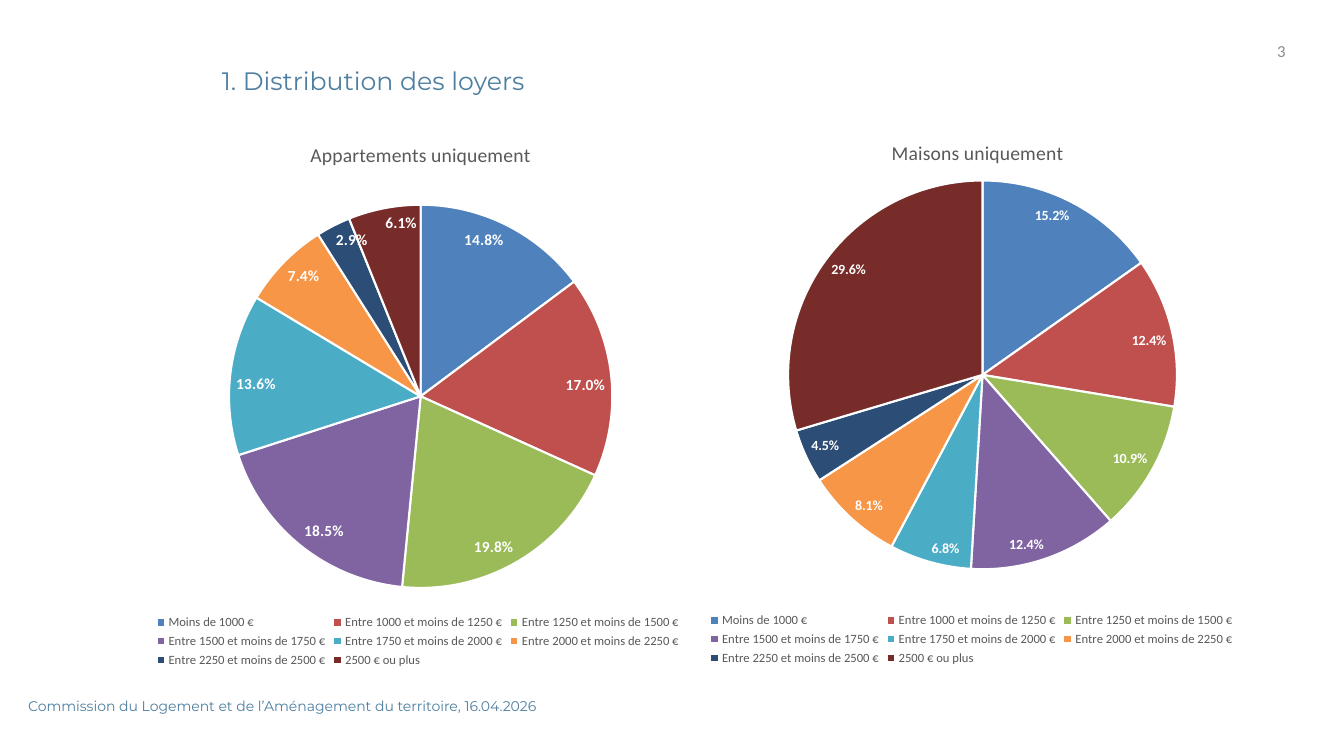
from lxml import etree
from pptx import Presentation
from pptx import util as u
from pptx.chart.data import CategoryChartData
from pptx.dml.color import RGBColor
from pptx.enum import chart as ch, text
from pptx.oxml.ns import qn

BLUE = "4E7FA0"
GREY = "595959"
WHITE = "FFFFFF"
SLICES = ["4F81BD", "C0504D", "9BBB59", "8064A2",
          "4BACC6", "F79646", "2C4D75", "772C2A"]
BOUNDS = range(1000, 2500, 250)
RENTS = (["Moins de 1000 €"]
         + [f"Entre {low} et moins de {low + 250} €" for low in BOUNDS]
         + ["2500 € ou plus"])
FLATS = [0.148, 0.17, 0.198, 0.185, 0.136, 0.074, 0.029, 0.061]
HOUSES = [0.152, 0.124, 0.109, 0.124, 0.068, 0.081, 0.045, 0.296]


def colour(value):
    """Turn a hex string into a colour."""
    return RGBColor.from_string(value)


def style(font, name, size, shade, bold=False):
    """Format a font."""
    font.name = name
    font.size = u.Pt(size)
    font.color.rgb = colour(shade)
    font.bold = bold


def place(shape, left, top, width, height):
    """Move and size a shape, in inches."""
    shape.left, shape.top = u.Inches(left), u.Inches(top)
    shape.width, shape.height = u.Inches(width), u.Inches(height)


def write(shape, words, name, size, shade, align=text.PP_ALIGN.LEFT,
          anchor=text.MSO_ANCHOR.TOP):
    """Fill a shape with one formatted paragraph."""
    frame = shape.text_frame
    frame.text = words
    frame.word_wrap = True
    frame.auto_size = text.MSO_AUTO_SIZE.NONE
    frame.vertical_anchor = anchor
    para = frame.paragraphs[0]
    para.alignment = align
    style(para.runs[0].font, name, size, shade)


def add_label(page, area, words, *look, **layout):
    """Add a text box."""
    box = page.shapes.add_textbox(0, 0, 0, 0)
    place(box, *area)
    write(box, words, *look, **layout)


def set_layout(parent, before, **fractions):
    """Fix the layout of a chart part as fractions of the chart."""
    for old in parent.findall(qn("c:layout")):
        parent.remove(old)
    layout = etree.Element(qn("c:layout"))
    manual = etree.SubElement(layout, qn("c:manualLayout"))
    if "w" in fractions:
        etree.SubElement(manual, qn("c:layoutTarget")).set("val", "inner")
    for mode in ("xMode", "yMode"):
        etree.SubElement(manual, qn(f"c:{mode}")).set("val", "edge")
    for key, value in fractions.items():
        etree.SubElement(manual, qn(f"c:{key}")).set("val", str(value))
    parent.find(qn(before)).addprevious(layout)


def add_pie(page, left, top, heading, shares, label_size, heading_x, pie):
    """Add a pie chart of rent shares with heading and legend."""
    data = CategoryChartData(number_format="0.0%")
    data.categories = RENTS
    data.add_series("Series 1", shares)
    side = u.Inches(5.51)
    chart = page.shapes.add_chart(ch.XL_CHART_TYPE.PIE, u.Inches(left),
                                  u.Inches(top), side, side, data).chart
    style(chart.font, "Calibri", 10, "000000")

    title = chart.chart_title
    title.text_frame.text = heading
    style(title.text_frame.paragraphs[0].runs[0].font, "Calibri", 14, GREY)
    title.include_in_layout = False
    set_layout(title._element, "c:overlay", x=heading_x, y=0.04)

    chart.has_legend = True
    chart.legend.position = ch.XL_LEGEND_POSITION.BOTTOM
    chart.legend.include_in_layout = False
    style(chart.legend.font, "Calibri", 9, GREY)

    plot = chart.plots[0]
    plot.vary_by_categories = True
    x, y, size = pie
    set_layout(plot._element.getparent(), "c:pieChart", x=x, y=y, w=size, h=size)
    for index, shade in enumerate(SLICES):
        form = plot.series[0].points[index].format
        form.fill.solid()
        form.fill.fore_color.rgb = colour(shade)
        form.line.color.rgb = colour(WHITE)
        form.line.width = u.Pt(1.5)

    plot.has_data_labels = True
    labels = plot.data_labels
    labels.show_value = True
    labels.show_percentage = False
    labels.number_format = "0.0%"
    labels.number_format_is_linked = False
    labels.position = ch.XL_LABEL_POSITION.INSIDE_END
    style(labels.font, "Calibri", label_size, WHITE, bold=True)


def main():
    """Build the slide and save it."""
    deck = Presentation()
    deck.slide_width, deck.slide_height = u.Inches(13.33), u.Inches(7.5)
    page = deck.slides.add_slide(deck.slide_layouts[5])

    title = page.shapes.title
    place(title, 2.1, 0.6, 10.29, 0.4)
    write(title, "1. Distribution des loyers", "Montserrat", 18, BLUE)
    add_label(page, (0.18, 6.87, 7.98, 0.27),
              "Commission du Logement et de l’Aménagement du territoire, 16.04.2026",
              "Montserrat", 10, BLUE)
    add_label(page, (9.74, 0.3, 3.11, 0.4), "3", "Calibri", 12, "8C8C8C",
              align=text.PP_ALIGN.RIGHT, anchor=text.MSO_ANCHOR.MIDDLE)

    add_pie(page, 1.39, 1.15, "Appartements uniquement", FLATS, 11,
            0.3, (0.16, 0.16, 0.69))
    add_pie(page, 6.88, 1.13, "Maisons uniquement", HOUSES, 10,
            0.35, (0.17, 0.12, 0.7))
    deck.save("out.pptx")


if __name__ == "__main__":
    main()
